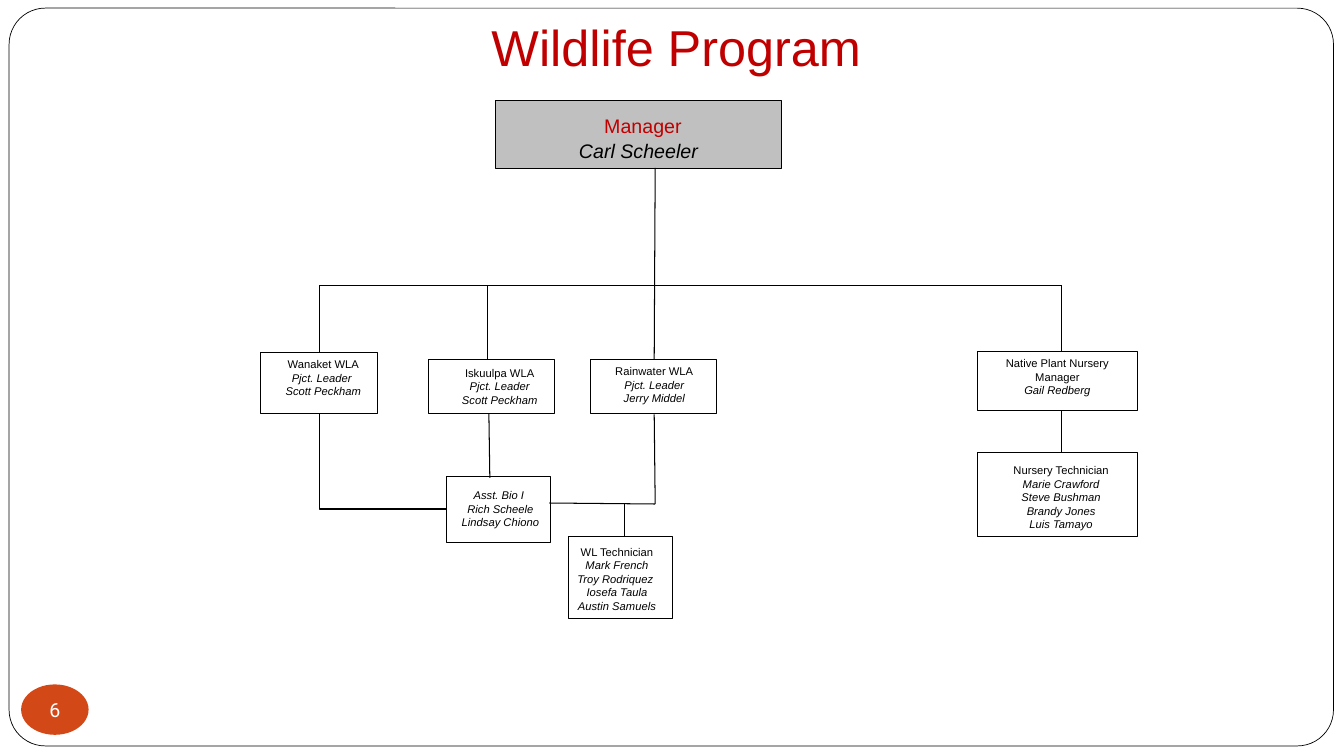
from pptx import Presentation
from pptx.dml.color import RGBColor
from pptx.enum.shapes import MSO_CONNECTOR, MSO_SHAPE
from pptx.enum.text import MSO_ANCHOR, PP_ALIGN
from pptx.oxml.ns import qn
from pptx.util import Pt

BLACK = RGBColor(0, 0, 0)
WHITE = RGBColor(255, 255, 255)
RED = RGBColor(0xC0, 0, 0)
GRAY = RGBColor(0xC0, 0xC0, 0xC0)
ORANGE = RGBColor(0xD3, 0x48, 0x17)

TITLE = "Wildlife Program"
MANAGER = ("Manager", "Carl Scheeler")
PAGE = "6"

# box, (text left, top, width), upright lines, italic lines
TEAMS = [
    ((185.8, 252, 84.2, 43.2), (192, 252, 78),
     ["Wanaket WLA"], ["Pjct. Leader ", "Scott Peckham"]),
    ((306, 257, 90, 38.2), (318, 258, 78),
     ["Iskuulpa WLA"], ["Pjct. Leader", "Scott Peckham"]),
    ((422, 257, 90, 38.2), (428.4, 257, 78),
     ["Rainwater WLA"], ["Pjct. Leader", "Jerry Middel"]),
    ((698.4, 251.3, 113.8, 41.8), (698.4, 251.3, 113.8),
     ["Native Plant Nursery", "Manager"], ["Gail Redberg"]),
    ((698.4, 323.3, 113.8, 59.8), (704, 327.6, 108),
     ["Nursery Technician"],
     ["Marie Crawford", "Steve Bushman", "Brandy Jones", "Luis Tamayo"]),
    ((319, 340.6, 74.2, 46.8), (309.6, 345.6, 95.8),
     [], ["Asst. Bio I ", "Rich Scheele", "Lindsay Chiono"]),
    ((406, 383, 74.2, 59), (383.8, 386, 113.8),
     ["WL Technician"],
     ["Mark French", "Troy Rodriquez ", "Iosefa Taula", "Austin Samuels"]),
]

BUS_Y = 203.8
TRUNK_X = 468
WANAKET_X = 228.2
NURSERY_X = 758.2
LINES = [
    (TRUNK_X, 120, 467.3, 257),
    (TRUNK_X, BUS_Y, NURSERY_X, BUS_Y),
    (348.5, BUS_Y, 348.5, 257),
    (NURSERY_X, BUS_Y, NURSERY_X, 251.3),
    (NURSERY_X, 293.2, NURSERY_X, 323.3),
    (349.2, 295.2, 349.9, 341.3),
    (467.3, 296, TRUNK_X, 360),
    (392.4, 359.3, TRUNK_X, 360),
    (446.4, 359.3, 446.4, 383),
]
ELBOWS = [
    (TRUNK_X, BUS_Y, WANAKET_X, 252),
    (319, 363.6, WANAKET_X, 295.2),
]


def add_box(s, kind, place, fill=None, line=BLACK, width=0.75):
    sp = s.shapes.add_shape(kind, *map(Pt, place))
    sp.shadow.inherit = False
    if fill is None:
        sp.fill.background()
    else:
        sp.fill.solid()
        sp.fill.fore_color.rgb = fill
    if line is None:
        sp.line.fill.background()
    else:
        sp.line.color.rgb = line
        sp.line.width = Pt(width)
    return sp


def write(sp, lines, size=8, color=BLACK, upright=0, font="Arial",
          anchor=MSO_ANCHOR.TOP, wrap=True, inset=(7.2, 3.6)):
    tf = sp.text_frame
    tf.word_wrap = wrap
    tf.vertical_anchor = anchor
    tf.margin_left = tf.margin_right = Pt(inset[0])
    tf.margin_top = tf.margin_bottom = Pt(inset[1])
    for i, line in enumerate(lines):
        p = tf.add_paragraph() if i else tf.paragraphs[0]
        p.alignment = PP_ALIGN.CENTER
        r = p.add_run()
        r.text = line
        r.font.name = font
        r.font.size = Pt(size)
        r.font.color.rgb = color
        r.font.italic = i >= upright


def add_text(s, place, lines, **fmt):
    write(s.shapes.add_textbox(*map(Pt, place)), lines, **fmt)


def connect(s, ends, elbow=False):
    kind = MSO_CONNECTOR.ELBOW if elbow else MSO_CONNECTOR.STRAIGHT
    c = s.shapes.add_connector(kind, *map(Pt, ends))
    c.line.color.rgb = BLACK
    c.line.width = Pt(0.75)
    pr = c._element.spPr
    if elbow:
        pr.find(qn("a:prstGeom")).set("prst", "bentConnector2")
    pr.append(pr.makeelement(qn("a:effectLst"), {}))


def main():
    prs = Presentation()
    prs.slide_width, prs.slide_height = Pt(960), Pt(540)
    s = prs.slides.add_slide(prs.slide_layouts[6])

    frame = add_box(s, MSO_SHAPE.ROUNDED_RECTANGLE, (6.5, 5.8, 946, 527),
                    fill=WHITE, width=0.5)
    frame.adjustments[0] = 0.049
    add_text(s, (138.2, 5.8, 689.8, 54), [TITLE], size=36, color=RED,
             upright=1, anchor=MSO_ANCHOR.MIDDLE)

    add_box(s, MSO_SHAPE.RECTANGLE, (354.2, 72, 203.8, 48.2), fill=GRAY)
    role, name = MANAGER
    add_text(s, (354.2, 77.8, 210.2, 24.5), [role], size=14, color=RED, upright=1)
    add_text(s, (354.2, 95.8, 203.8, 24.5), [name], size=14)

    for ends in LINES:
        connect(s, ends)
    for ends in ELBOWS:
        connect(s, ends, elbow=True)
    for box, (left, top, width), upright, italic in TEAMS:
        add_box(s, MSO_SHAPE.RECTANGLE, box)
        lines = upright + italic
        add_text(s, (left, top, width, 7.2 + 9.6 * len(lines)), lines,
                 upright=len(upright))

    badge = add_box(s, MSO_SHAPE.OVAL, (15.1, 488.9, 48.2, 36), fill=ORANGE, line=None)
    write(badge, [PAGE], size=14, color=WHITE, upright=1, font="Roboto",
          anchor=MSO_ANCHOR.MIDDLE, wrap=False, inset=(0, 0))
    prs.save("out.pptx")


if __name__ == "__main__":
    main()
